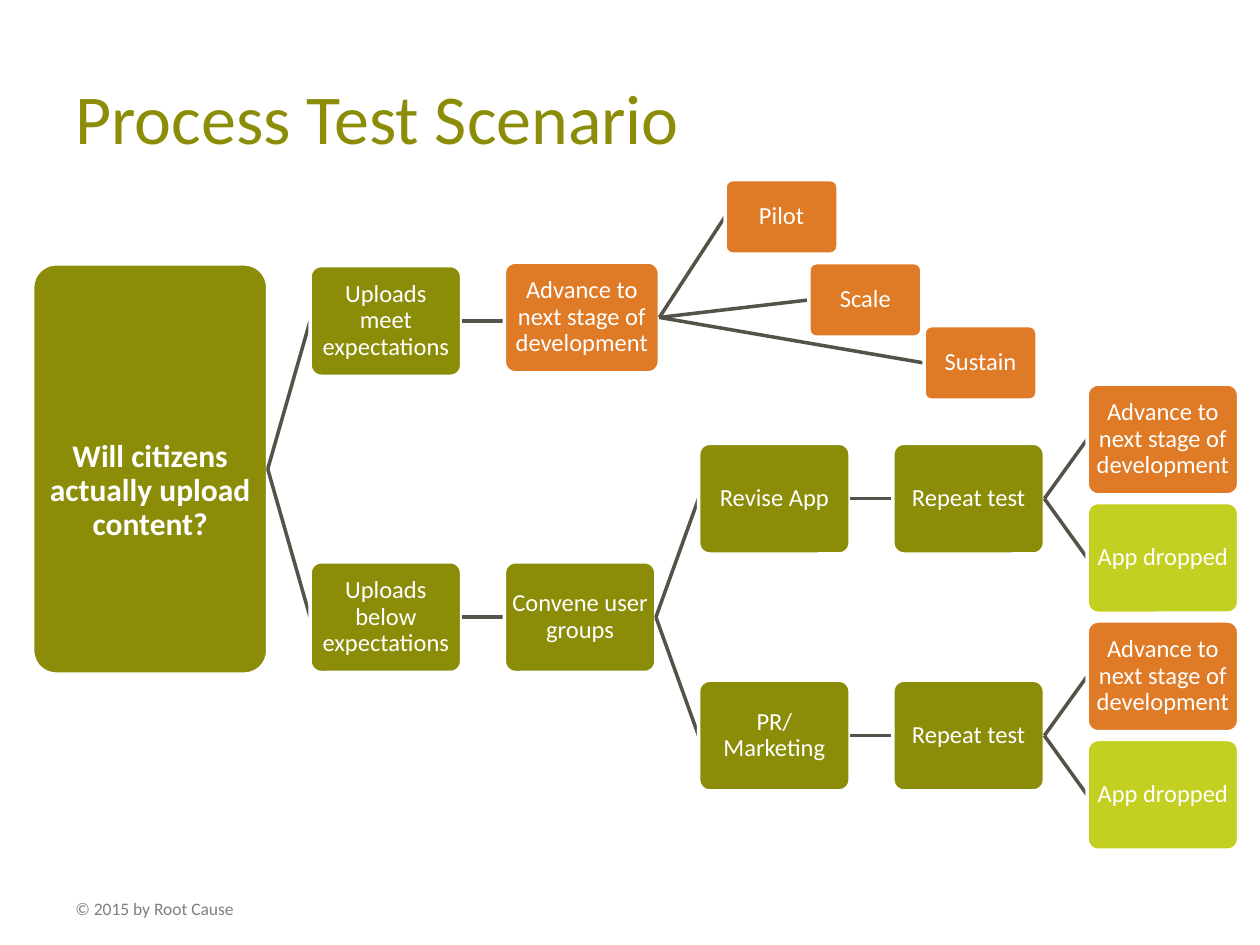
from dataclasses import dataclass

from lxml import etree
from pptx import Presentation
from pptx.dml.color import RGBColor
from pptx.enum.shapes import MSO_CONNECTOR, MSO_SHAPE
from pptx.enum.text import MSO_ANCHOR, PP_ALIGN
from pptx.oxml.ns import qn
from pptx.util import Pt

ROUNDED = MSO_SHAPE.ROUNDED_RECTANGLE
STRAIGHT = MSO_CONNECTOR.STRAIGHT
MIDDLE = MSO_ANCHOR.MIDDLE
LEFT, CENTER = PP_ALIGN.LEFT, PP_ALIGN.CENTER

OLIVE = RGBColor(0x8B, 0x8D, 0x09)
ORANGE = RGBColor(0xDF, 0x7A, 0x26)
LIME = RGBColor(0xC3, 0xCF, 0x21)
WHITE = RGBColor(0xFF, 0xFF, 0xFF)
CHARCOAL = RGBColor(0x53, 0x53, 0x49)
GRAY = RGBColor(0x7F, 0x7F, 0x7F)

FONT = "Calibri"
LEFT_SIDE, RIGHT_SIDE = 1, 3
FIRST_COLUMN, COLUMN_STEP = 177.2, 111
FIRST_ROW, ROW_STEP = 251.1, 33.85
ADVANCE = "Advance to next stage of development"


@dataclass
class Step:
    """A box of the decision tree, placed by its left edge and middle height."""

    text: str
    left: float
    middle: float
    color: RGBColor = OLIVE
    width: float = 86.6
    height: float = 63.3
    inset: float = 2.7
    children: tuple = ()


def grid_step(text, column, row, *children, color=OLIVE):
    """Return a step placed on the column and row grid."""
    left = FIRST_COLUMN + column * COLUMN_STEP
    middle = FIRST_ROW + row * ROW_STEP
    return Step(text, left, middle, color, children=children)


def stage(text, left, middle):
    """Return one of the small stages that follow success."""
    return Step(text, left, middle, ORANGE, 64.6, 42.6, 2)


def retest(text, row):
    """Return a remedy followed by a repeated test and its two outcomes."""
    outcomes = (
        grid_step(ADVANCE, 4, row - 1, color=ORANGE),
        grid_step("App dropped", 4, row + 1, color=LIME),
    )
    return grid_step(text, 2, row, grid_step("Repeat test", 3, row, *outcomes))


def format_text(frame, size, color, align, bold=False):
    """Apply font, size, colour and alignment to all text of a frame."""
    for para in frame.paragraphs:
        para.alignment = align
        for span in para.runs:
            span.font.name = FONT
            span.font.size = Pt(size)
            span.font.bold = bold
            span.font.color.rgb = color


def add_box(page, step, size=14, bold=False):
    """Draw a step as a rounded box with centred text."""
    box = page.shapes.add_shape(
        ROUNDED, Pt(step.left), Pt(step.middle - step.height / 2),
        Pt(step.width), Pt(step.height))
    box.adjustments[0] = 0.1
    box.shadow.inherit = False
    box.fill.solid()
    box.fill.fore_color.rgb = step.color
    box.line.color.rgb = WHITE
    box.line.width = Pt(2)
    frame = box.text_frame
    frame.text = step.text
    frame.word_wrap = True
    frame.vertical_anchor = MIDDLE
    frame.margin_left = frame.margin_right = Pt(step.inset)
    frame.margin_top = frame.margin_bottom = Pt(step.inset)
    format_text(frame, size, WHITE, CENTER, bold)
    frame.paragraphs[0].line_spacing = 0.9
    return box


def add_link(page, parent, step):
    """Draw the line that leads from a parent box to the step."""
    start = parent.top + parent.height // 2
    nearly_level = abs(start - Pt(step.middle)) < Pt(4)
    end = start if nearly_level else Pt(step.middle)
    link = page.shapes.add_connector(
        STRAIGHT, parent.left + parent.width, start, Pt(step.left), end)
    link.begin_connect(parent, RIGHT_SIDE)
    link.line.color.rgb = CHARCOAL
    link.line.width = Pt(2)
    etree.SubElement(link._element.spPr, qn("a:effectLst"))
    return link


def add_branches(page, parent, steps):
    """Draw steps and everything that follows them, linked to the parent."""
    for step in steps:
        link = add_link(page, parent, step)
        box = add_box(page, step)
        if abs(link.end_y - box.top - box.height // 2) < Pt(1):
            link.end_connect(box, LEFT_SIDE)
        add_branches(page, box, step.children)


def add_title(page, text):
    """Fill and place the title placeholder."""
    title = page.shapes.title
    title.left, title.top = Pt(36), Pt(21.6)
    title.width, title.height = Pt(648), Pt(90)
    title.text_frame.text = text
    title.text_frame.vertical_anchor = MIDDLE
    format_text(title.text_frame, 40, OLIVE, LEFT)


def add_footer(page, text):
    """Add the copyright line."""
    box = page.shapes.add_textbox(Pt(36), Pt(509.8), Pt(120.2), Pt(19.4))
    box.text_frame.text = text
    box.text_frame.word_wrap = True
    format_text(box.text_frame, 10, GRAY, LEFT)


def main():
    """Build the slide and save it."""
    deck = Presentation()
    deck.slide_width, deck.slide_height = Pt(720), Pt(540)
    page = deck.slides.add_slide(deck.slide_layouts[5])
    add_footer(page, "© 2015 by Root Cause")
    add_title(page, "Process Test Scenario")

    stages = (
        stage("Pilot", 414.3, 123.9),
        stage("Scale", 462.2, 171.4),
        stage("Sustain", 528, 207.4),
    )
    advance = Step(ADVANCE, 288.2, 181.4, ORANGE, 88.6, children=stages)
    convene = grid_step("Convene user groups", 1, 3,
                        retest("Revise App", 1), retest("PR/Marketing", 5))
    answers = (
        grid_step("Uploads meet expectations", 0, -2, advance),
        grid_step("Uploads below expectations", 0, 3, convene),
    )
    question = Step("Will citizens actually upload content?", 18.7, 268,
                    width=134.3, height=234.4, inset=5)
    root = add_box(page, question, 18, True)
    root.text_frame.margin_top = Pt(31)
    add_branches(page, root, answers)
    deck.save("out.pptx")


if __name__ == "__main__":
    main()
